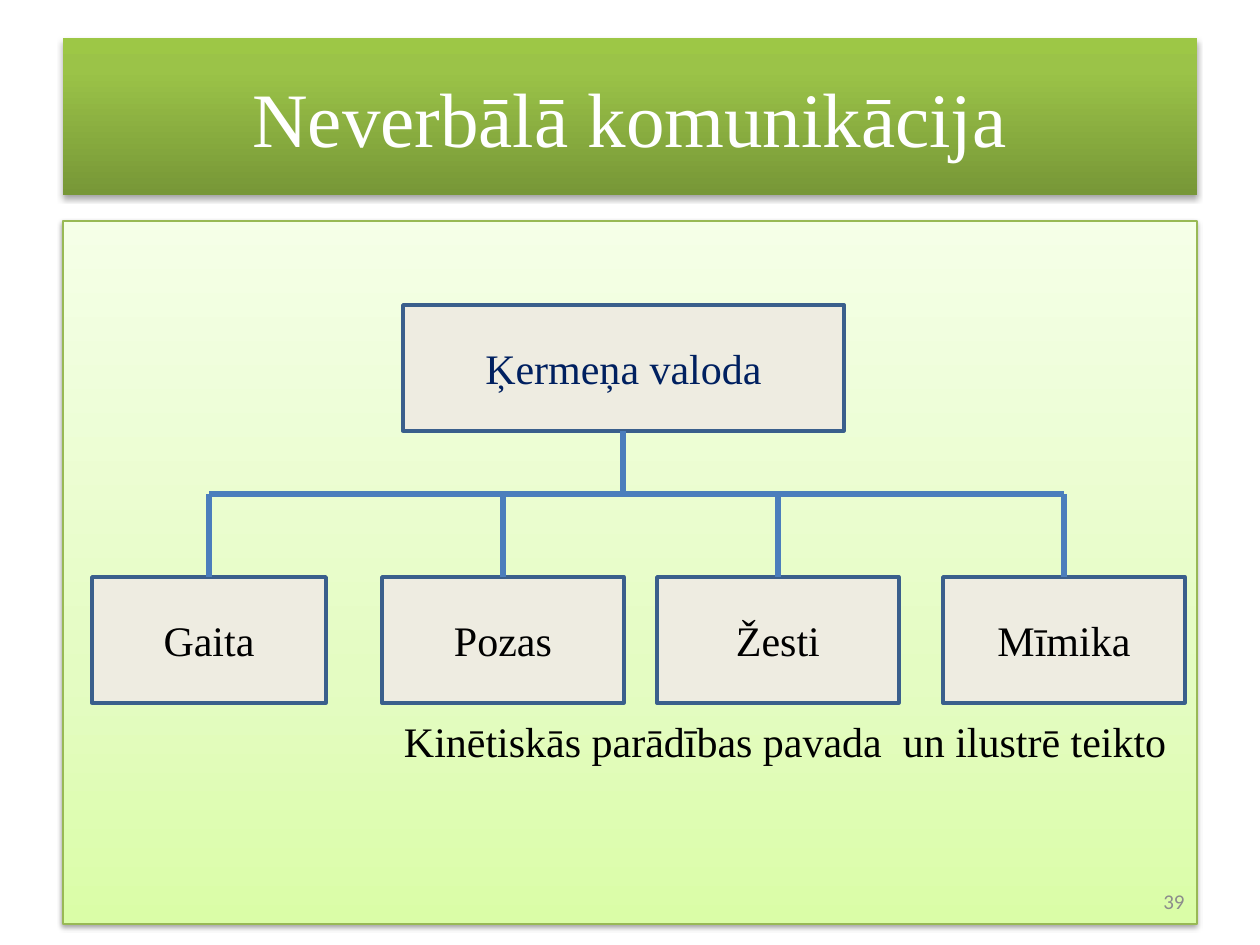
import pptx
import pptx.util
import pptx.dml.color
import pptx.enum.shapes
import pptx.enum.text
import pptx.oxml
import pptx.oxml.ns
from dataclasses import dataclass

PX = 914400 / 126
ALIGN = pptx.enum.text.PP_ALIGN
ANCHOR = pptx.enum.text.MSO_ANCHOR


@dataclass(frozen=True)
class Theme:
    serif: str = "Times New Roman"
    sans: str = "Calibri"
    title_pt: int = 44
    text_pt: int = 24
    number_pt: int = 12
    white: str = "FFFFFF"
    black: str = "000000"
    navy: str = "002060"
    grey: str = "8C8C8C"
    box_fill: str = "EEECE1"
    box_line: str = "3A5F8C"
    connector: str = "4B7EBC"
    panel_line: str = "98B955"
    title_stops: tuple = ((0, "779737"), (80, "9BC348"), (100, "9DC746"))
    panel_stops: tuple = ((0, "DAFDA7"), (35, "E4FCC2"), (100, "F5FFE7"))


THEME = Theme()


def px(n):
    return pptx.util.Emu(round(n * PX))


def rgb(code):
    return pptx.dml.color.RGBColor.from_string(code)


def add_text(sp, text, size, color, align=ALIGN.CENTER, anchor=ANCHOR.MIDDLE, font=THEME.serif):
    tf = sp.text_frame
    tf.word_wrap = True
    tf.vertical_anchor = anchor
    p = tf.paragraphs[0]
    p.alignment = align
    r = p.add_run()
    r.text = text
    r.font.name = font
    r.font.size = pptx.util.Pt(size)
    r.font.color.rgb = rgb(color)


def add_rect(s, box, line=None, width=0):
    sp = s.shapes.add_shape(pptx.enum.shapes.MSO_SHAPE.RECTANGLE, *map(px, box))
    sp.shadow.inherit = False
    if line:
        sp.line.color.rgb = rgb(line)
        sp.line.width = pptx.util.Pt(width)
    else:
        sp.line.fill.background()
    return sp


def add_gradient(sp, stops):
    """Fill upwards from the first stop to the last."""
    sp.fill.gradient()
    sp.fill.gradient_angle = 90
    grad = sp.element.spPr.find(pptx.oxml.ns.qn("a:gradFill"))
    grad.replace(grad.find(pptx.oxml.ns.qn("a:gsLst")), pptx.oxml.parse_xml(
        f'<a:gsLst {pptx.oxml.ns.nsdecls("a")}>' + "".join(
            f'<a:gs pos="{pos * 1000}"><a:srgbClr val="{color}"/></a:gs>'
            for pos, color in stops) + "</a:gsLst>"))


def add_shadow(sp, alpha, distance):
    effects = sp.element.spPr.find(pptx.oxml.ns.qn("a:effectLst"))
    effects.append(pptx.oxml.parse_xml(
        f'<a:outerShdw {pptx.oxml.ns.nsdecls("a")} blurRad="{pptx.util.Pt(3.1)}" '
        f'dist="{pptx.util.Pt(distance)}" dir="5400000" rotWithShape="0">'
        f'<a:srgbClr val="{THEME.black}"><a:alpha val="{alpha * 1000}"/></a:srgbClr>'
        '</a:outerShdw>'))


def add_title(s, text):
    sp = add_rect(s, (63, 38, 1134, 157))
    add_gradient(sp, THEME.title_stops)
    add_shadow(sp, 35, 1.8)
    add_text(sp, text, THEME.title_pt, THEME.white)


def add_panel(s, caption):
    sp = add_rect(s, (63, 221, 1134, 703), THEME.panel_line, 0.75)
    add_gradient(sp, THEME.panel_stops)
    add_shadow(sp, 38, 1.6)
    sp.text_frame.margin_left = px(341)
    sp.text_frame.margin_top = px(495)
    add_text(sp, caption, THEME.text_pt, THEME.black, ALIGN.LEFT, ANCHOR.TOP)


def add_node(s, text, box, color):
    sp = add_rect(s, box, THEME.box_line, 2)
    sp.fill.solid()
    sp.fill.fore_color.rgb = rgb(THEME.box_fill)
    add_text(sp, text, THEME.text_pt, color)


def add_line(s, *ends):
    line = s.shapes.add_connector(pptx.enum.shapes.MSO_CONNECTOR.STRAIGHT, *map(px, ends))
    line.line.color.rgb = rgb(THEME.connector)
    line.line.width = pptx.util.Pt(3)
    line.element.spPr.append(pptx.oxml.parse_xml(
        f'<a:effectLst {pptx.oxml.ns.nsdecls("a")}/>'))


def add_tree(s, root, leaves):
    root_x, root_y, root_w, height = 403, 305, 441, 126
    bus_y, leaf_y = 494, 577
    trunk_x = root_x + root_w // 2
    add_node(s, root, (root_x, root_y, root_w, height), THEME.navy)
    for text, x, w in leaves:
        add_node(s, text, (x, leaf_y, w, height), THEME.black)
    centers = [x + w // 2 for _, x, w in leaves]
    add_line(s, trunk_x, root_y + height, trunk_x, bus_y)
    for end in (centers[0], centers[-1]):
        add_line(s, trunk_x, bus_y, end, bus_y)
    for x in centers:
        add_line(s, x, bus_y, x, leaf_y)


def add_slide_number(s, number):
    sp = s.shapes.add_textbox(*map(px, (903, 876, 294, 50)))
    add_text(sp, number, THEME.number_pt, THEME.grey, ALIGN.RIGHT, font=THEME.sans)


def main():
    prs = pptx.Presentation()
    prs.slide_width, prs.slide_height = px(1260), px(945)
    s = prs.slides.add_slide(prs.slide_layouts[6])
    add_title(s, "Neverbālā komunikācija")
    add_panel(s, "Kinētiskās parādības pavada  un ilustrē teikto")
    add_tree(s, "Ķermeņa valoda", [
        ("Gaita", 92, 234), ("Pozas", 382, 242), ("Žesti", 657, 242), ("Mīmika", 943, 242)])
    add_slide_number(s, "39")
    prs.save("out.pptx")


if __name__ == "__main__":
    main()
